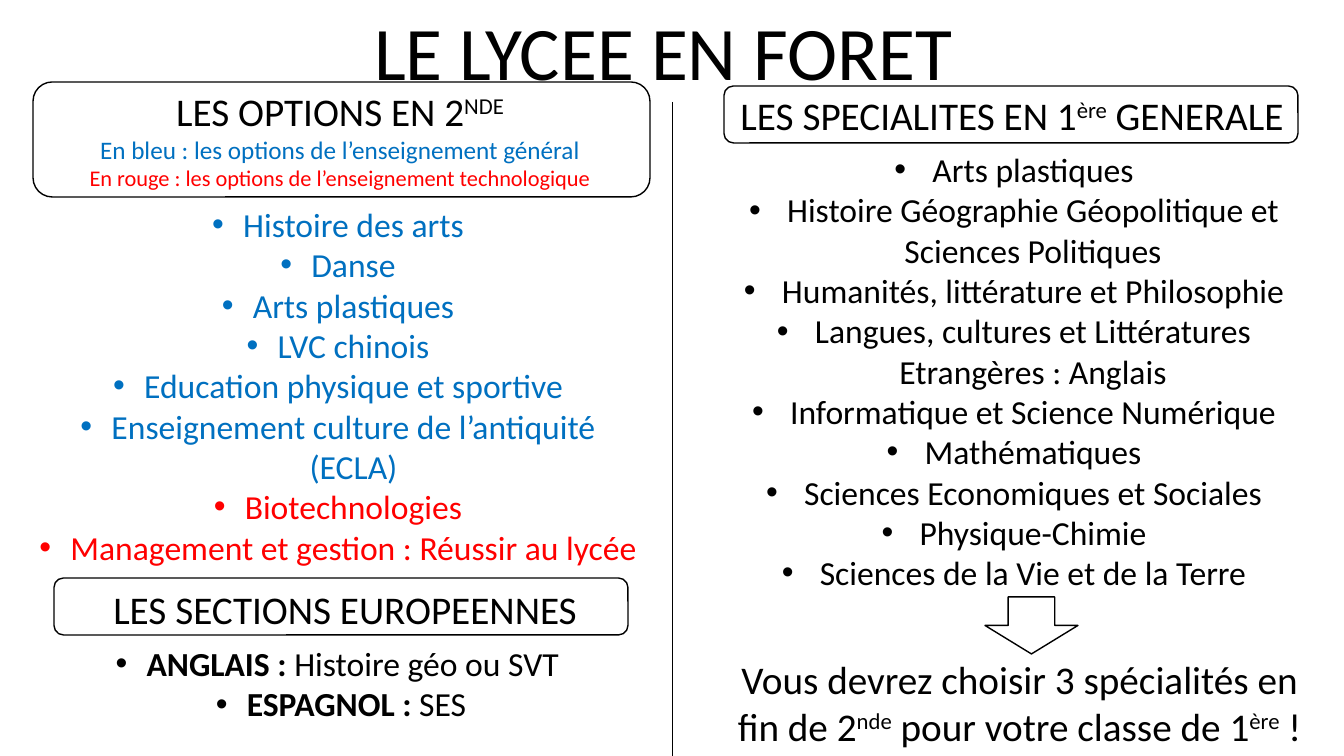
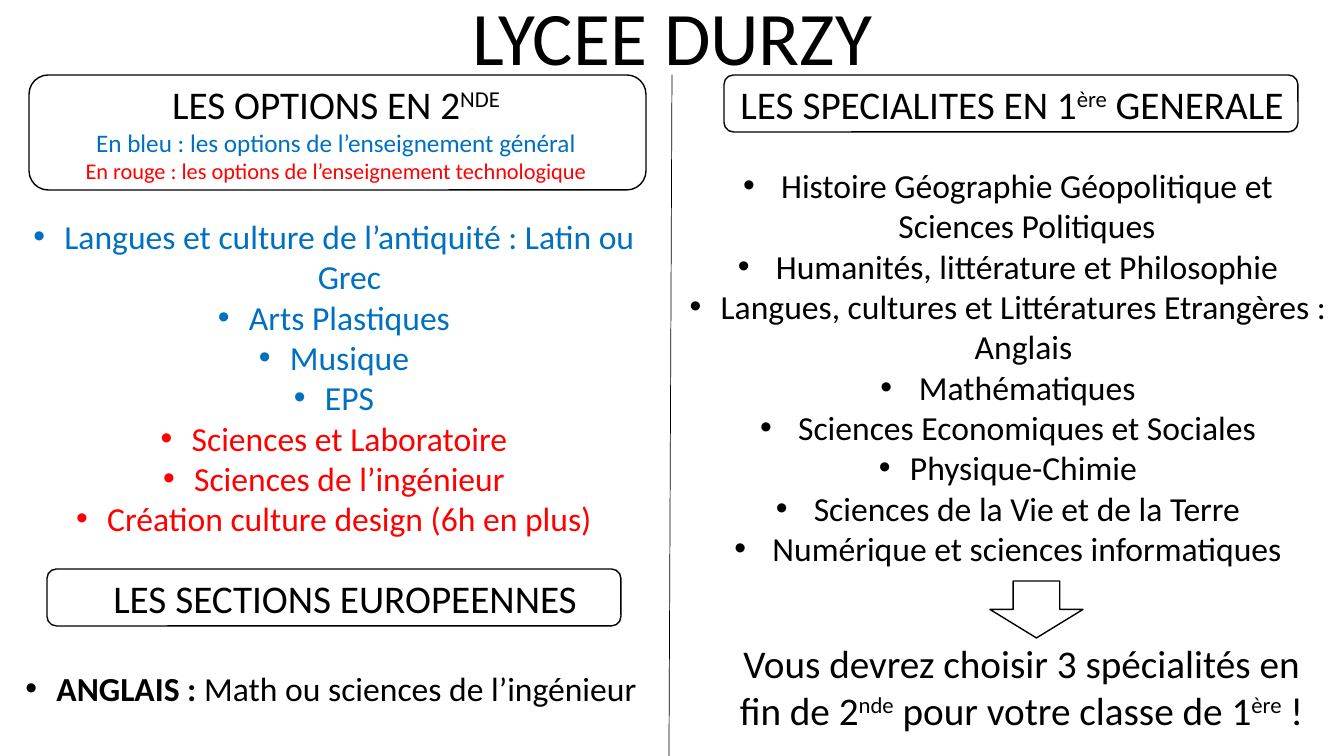
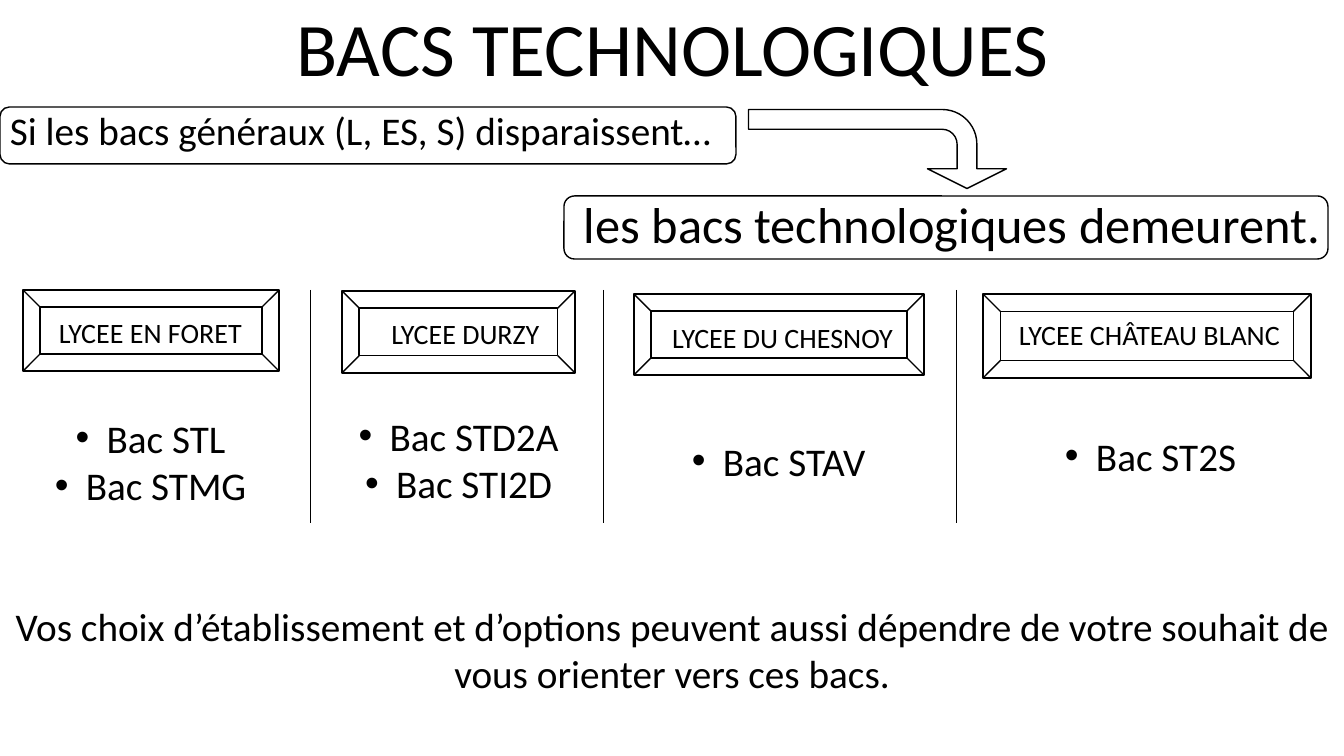
from dataclasses import dataclass

from lxml import etree
from pptx import Presentation
from pptx.dml.color import RGBColor
from pptx.enum.shapes import MSO_CONNECTOR, MSO_SHAPE
from pptx.enum.text import MSO_ANCHOR, PP_ALIGN
from pptx.oxml.ns import qn
from pptx.util import Emu, Pt

LEFT, CENTER = PP_ALIGN.LEFT, PP_ALIGN.CENTER
TOP, MIDDLE = MSO_ANCHOR.TOP, MSO_ANCHOR.MIDDLE
STRAIGHT = MSO_CONNECTOR.STRAIGHT
ROUNDED, BEVEL = MSO_SHAPE.ROUNDED_RECTANGLE, MSO_SHAPE.BEVEL
DOWN_ARROW, BENT_ARROW = MSO_SHAPE.DOWN_ARROW, MSO_SHAPE.BENT_ARROW
EMU_PER_PX = 914400 / 100.8
PAGE_WIDTH, PAGE_HEIGHT = 1344, 756


def px(length):
    return Emu(round(length * EMU_PER_PX))


@dataclass(frozen=True)
class Theme:
    font: str = "Calibri"
    black: RGBColor = RGBColor(0x00, 0x00, 0x00)
    blue: RGBColor = RGBColor(0x00, 0x70, 0xC0)
    red: RGBColor = RGBColor(0xFF, 0x00, 0x00)
    title: int = 54
    banner: int = 36
    heading: int = 28
    item: int = 24
    school: int = 20
    general_key: int = 18
    technical_key: int = 16
    outline: float = 1
    rule: float = 0.5
    indent: int = 31
    wide_indent: int = 38


THEME = Theme()


@dataclass(frozen=True)
class Line:
    """One paragraph: text between ^ marks is raised, the lead is bold."""
    text: str
    size: int = THEME.heading
    color: RGBColor = THEME.black
    indent: int = 0
    lead: str = ""


def items(texts, color=THEME.black, indent=THEME.indent, size=THEME.item):
    return [Line(text, size, color, indent) for text in texts]


class Pages:
    def __init__(self, theme):
        self.theme = theme
        self.deck = Presentation()
        self.deck.slide_width, self.deck.slide_height = px(PAGE_WIDTH), px(PAGE_HEIGHT)
        self.page = None

    def new_page(self):
        self.page = self.deck.slides.add_slide(self.deck.slide_layouts[6])

    def text(self, place, lines, align=CENTER, anchor=TOP, spacing=1.0):
        box = self.page.shapes.add_textbox(*map(px, place))
        frame = box.text_frame
        frame.word_wrap = True
        frame.vertical_anchor = anchor
        for index, line in enumerate(lines):
            para = frame.add_paragraph() if index else frame.paragraphs[0]
            para.alignment = align
            para.line_spacing = spacing
            para.font.name = self.theme.font
            para.font.size = Pt(line.size)
            para.font.color.rgb = line.color
            if line.indent:
                self.bullet(para, line.indent)
            self.spans(para, line)

    def bullet(self, para, indent):
        properties = para._p.get_or_add_pPr()
        properties.set("marL", str(px(indent)))
        properties.set("indent", str(-px(indent)))
        font = etree.Element(qn("a:buFont"), typeface="Arial")
        mark = etree.Element(qn("a:buChar"), char="•")
        default = properties.find(qn("a:defRPr"))
        default.addprevious(font)
        default.addprevious(mark)

    def spans(self, para, line):
        if line.lead:
            span = para.add_run()
            span.text = line.lead
            span.font.bold = True
        for index, part in enumerate(line.text.split("^")):
            if part:
                span = para.add_run()
                span.text = part
                if index % 2:
                    span._r.get_or_add_rPr().set("baseline", "30000")

    def outline(self, kind, place, adjustments=(), rotation=0):
        shape = self.page.shapes.add_shape(kind, *map(px, place))
        shape.shadow.inherit = False
        shape.fill.background()
        shape.line.color.rgb = self.theme.black
        shape.line.width = Pt(self.theme.outline)
        shape.rotation = rotation
        for index, value in enumerate(adjustments):
            shape.adjustments[index] = value

    def rule(self, start, end):
        line = self.page.shapes.add_connector(STRAIGHT, *map(px, start + end))
        line.line.color.rgb = self.theme.black
        line.line.width = Pt(self.theme.rule)
        etree.SubElement(line._element.spPr, qn("a:effectLst"))

    def title(self, text, place, anchor=MIDDLE, spacing=0.9):
        self.text(place, [Line(text, self.theme.title)], anchor=anchor, spacing=spacing)

    def options_heading(self, left, top):
        theme = self.theme
        self.text((left, top, 672, 115), [
            Line("LES OPTIONS EN 2^NDE^"),
            Line("En bleu : les options de l’enseignement général",
                 theme.general_key, theme.blue),
            Line("En rouge : les options de l’enseignement technologique",
                 theme.technical_key, theme.red),
        ])
        self.outline(ROUNDED, (left + 29, top, 617, 115))

    def specialities_heading(self, top):
        self.text((699, top, 626, 57), [Line("LES SPECIALITES EN 1^ère^ GENERALE")])
        self.outline(ROUNDED, (724, top, 574, 57))

    def sections_heading(self, text_top, frame_left, frame_top):
        self.text((45, text_top, 600, 57), [Line("LES SECTIONS EUROPEENNES")])
        self.outline(ROUNDED, (frame_left, frame_top, 574, 57))

    def choice(self, arrow_left, arrow_top, text_left):
        """Arrow from the specialities down to the closing advice."""
        self.outline(DOWN_ARROW, (arrow_left, arrow_top, 93, 57))
        self.text((text_left, arrow_top + 53, 611, 105), [Line(
            "Vous devrez choisir 3 spécialités en fin de 2^nde^"
            " pour votre classe de 1^ère^ !")])


def forest_page(pages):
    theme = pages.theme
    pages.new_page()
    pages.title("LE LYCEE EN FORET ", (0, 0, PAGE_WIDTH, 102), TOP, 1.0)
    pages.options_heading(4, 82)
    pages.specialities_heading(86)
    pages.rule((672, 102), (672, PAGE_HEIGHT))
    pages.text((25, 199, 626, 377), items([
        "Histoire des arts",
        "Danse",
        "Arts plastiques",
        "LVC chinois",
        "Education physique et sportive",
        "Enseignement culture de l’antiquité (ECLA)",
    ], theme.blue) + items([
        "Biotechnologies",
        "Management et gestion : Réussir au lycée",
    ], theme.red))
    pages.sections_heading(580, 54, 578)
    pages.text((20, 638, 642, 92), [
        Line("Histoire géo ou SVT ", theme.item, indent=theme.indent, lead="ANGLAIS : "),
        Line("SES", theme.item, indent=theme.indent, lead="ESPAGNOL : "),
    ])
    pages.text((714, 144, 600, 458), items([
        "Arts plastiques",
        "Histoire Géographie Géopolitique et Sciences Politiques",
        "Humanités, littérature et Philosophie",
        "Langues, cultures et Littératures Etrangères : Anglais",
        "Informatique et Science Numérique",
        "Mathématiques",
        "Sciences Economiques et Sociales",
        "Physique-Chimie",
        "Sciences de la Vie et de la Terre",
    ], indent=theme.wide_indent))
    pages.choice(985, 597, 714)


def durzy_page(pages):
    theme = pages.theme
    pages.new_page()
    pages.title("LYCEE DURZY", (93, 6, 1159, 69))
    pages.options_heading(0, 75)
    pages.specialities_heading(75)
    pages.rule((672, 75), (669, PAGE_HEIGHT))
    pages.text((21, 211, 626, 336), items([
        "Langues et culture de l’antiquité : Latin ou Grec",
        "Arts Plastiques",
        "Musique",
        "EPS",
    ], theme.blue) + items([
        "Sciences et Laboratoire",
        "Sciences de l’ingénieur",
        "Création culture design (6h en plus)",
    ], theme.red))
    pages.sections_heading(569, 47, 569)
    pages.text((0, 663, 662, 50), [
        Line("Math ou sciences de l’ingénieur", theme.item,
             indent=theme.indent, lead="ANGLAIS : "),
    ])
    wide, narrow = theme.wide_indent, theme.indent
    specialities = [
        ("Histoire Géographie Géopolitique et Sciences Politiques", wide),
        ("Humanités, littérature et Philosophie", wide),
        ("Langues, cultures et Littératures Etrangères : Anglais", narrow),
        (" Mathématiques", narrow),
        ("Sciences Economiques et Sociales", wide),
        ("Physique-Chimie", narrow),
        ("Sciences de la Vie et de la Terre", wide),
        ("Numérique et sciences informatiques", wide),
    ]
    pages.text((672, 160, 672, 417),
               [Line(text, theme.item, indent=indent) for text, indent in specialities])
    pages.choice(990, 581, 716)


def technology_page(pages):
    theme = pages.theme
    pages.new_page()
    pages.title("BACS TECHNOLOGIQUES", (93, 2, 1159, 101))
    pages.text((0, 107, 736, 75), [Line("Si les bacs généraux (L, ES, S) disparaissent…")],
               LEFT, spacing=0.9)
    pages.outline(ROUNDED, (0, 107, 736, 57))
    pages.outline(BENT_ARROW, (838, 20, 79, 258), (0.25, 0.5, 0.25, 0.44), 90)
    pages.text((574, 188, 770, 72),
               [Line("les bacs technologiques demeurent.", theme.banner)], LEFT)
    pages.outline(ROUNDED, (564, 196, 764, 63))

    # School, plaque, name box, course box, courses
    schools = [
        ("LYCEE EN FORET", (23, 290, 256, 81), (36, 311, 229, 44),
         (42, 409, 217, 105), ["Bac STL", "Bac STMG"]),
        ("LYCEE DURZY", (342, 291, 233, 82), (363, 312, 205, 44),
         (342, 407, 233, 105), ["Bac STD2A", "Bac STI2D"]),
        ("LYCEE DU CHESNOY", (634, 294, 290, 81), (660, 316, 245, 44),
         (662, 432, 233, 57), ["Bac STAV"]),
        ("LYCEE CHÂTEAU BLANC", (983, 294, 328, 84), (1006, 313, 287, 44),
         (1034, 427, 233, 57), ["Bac ST2S"]),
    ]
    for name, plaque, name_box, course_box, courses in schools:
        pages.outline(BEVEL, plaque, (0.21,))
        pages.text(name_box, [Line(name, theme.school)])
        pages.text(course_box, items(courses, size=theme.heading))
    for x in (310, 603, 956):
        pages.rule((x, 290), (x, 523))
    pages.text((0, 597, PAGE_WIDTH, 105), [Line(
        "Vos choix d’établissement et d’options peuvent aussi dépendre"
        " de votre souhait de vous orienter vers ces bacs.")])


def main():
    pages = Pages(THEME)
    forest_page(pages)
    durzy_page(pages)
    technology_page(pages)
    pages.deck.save("out.pptx")


if __name__ == "__main__":
    main()
